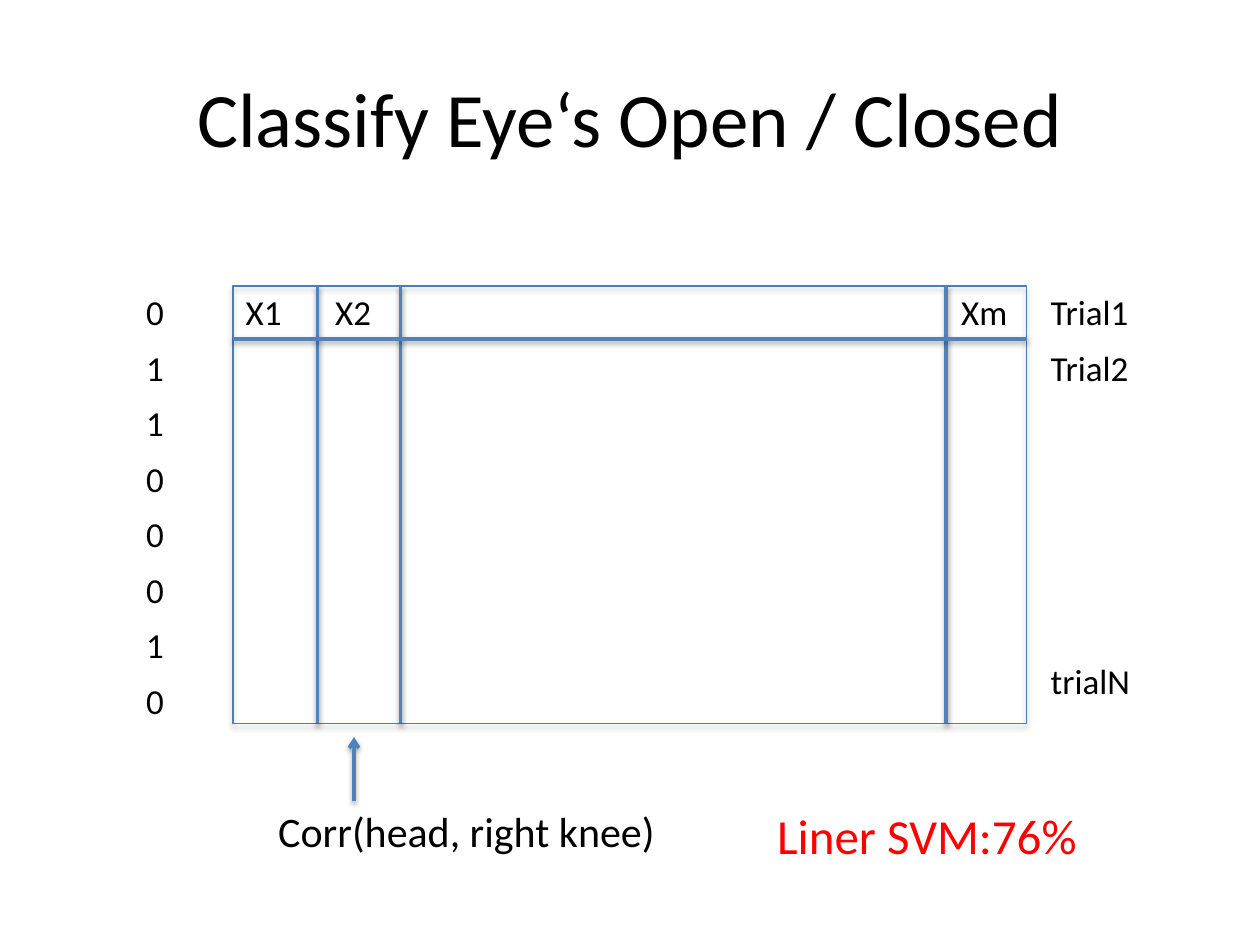
"""Build a slide showing the trial-by-feature matrix of an eye classifier."""
import pptx
import pptx.dml.color
import pptx.enum.shapes
import pptx.enum.text
import pptx.oxml
import pptx.oxml.ns
import pptx.util

Inches = pptx.util.Inches
Pt = pptx.util.Pt
RGBColor = pptx.dml.color.RGBColor

BLACK = RGBColor(0x00, 0x00, 0x00)
WHITE = RGBColor(0xFF, 0xFF, 0xFF)
RED = RGBColor(0xFF, 0x00, 0x00)
LINE_BLUE = RGBColor(0x4F, 0x81, 0xBD)
FRAME_BLUE = RGBColor(0x4B, 0x7E, 0xBC)
FONT = "Calibri"

LABELS = "01100010"
LEFT, TOP, WIDTH, HEIGHT = 1.85, 2.27, 6.3, 3.47
ROW_HEIGHT = 0.41
HEADER_BOTTOM = 2.69
COLUMN_LINES = (2.52, 3.18, 7.51)
FEATURE_WIDTHS = [0.71] * 9 + [1.06]
FEATURE_TEXTS = {(0, 0): "X1", (0, 1): "X2", (0, 8): "Xm",
                 (0, 9): "Trial1", (1, 9): "Trial2", (7, 9): "trialN"}


def add_run(p, text, size, color=BLACK):
    r = p.add_run()
    r.text = text
    r.font.name = FONT
    r.font.size = Pt(size)
    r.font.color.rgb = color


def add_shadow(shape, alpha, distance):
    shape._element.spPr.append(pptx.oxml.parse_xml(
        f'<a:effectLst {pptx.oxml.ns.nsdecls("a")}>'
        f'<a:outerShdw blurRad="{Pt(3.1)}" dist="{Pt(distance)}" dir="5400000" rotWithShape="0">'
        f'<a:srgbClr val="{BLACK}"><a:alpha val="{alpha * 1000}"/></a:srgbClr>'
        '</a:outerShdw></a:effectLst>'))


def set_borders(cell, bottom_width):
    tcPr = cell._tc.get_or_add_tcPr()
    for i, (side, width) in enumerate(zip("LRTB", (1, 1, 1, bottom_width))):
        tcPr.insert(i, pptx.oxml.parse_xml(
            f'<a:ln{side} {pptx.oxml.ns.nsdecls("a")} w="{Pt(width)}">'
            f'<a:solidFill><a:srgbClr val="{WHITE}"/></a:solidFill></a:ln{side}>'))


def add_grid(s, left, widths, texts, bordered=False):
    rows = len(LABELS)
    table = s.shapes.add_table(rows, len(widths), Inches(left), Inches(TOP),
                               Inches(sum(widths)), Inches(ROW_HEIGHT * rows)).table
    table.first_row = False
    table.horz_banding = False
    for column, width in zip(table.columns, widths):
        column.width = Inches(width)
    for i, row in enumerate(table.rows):
        row.height = Inches(ROW_HEIGHT)
        for j, cell in enumerate(row.cells):
            cell.fill.background()
            if bordered:
                set_borders(cell, 3 if i == 0 else 1)
            if (i, j) in texts:
                add_run(cell.text_frame.paragraphs[0], texts[i, j], 20)


def add_frame(s):
    sp = s.shapes.add_shape(pptx.enum.shapes.MSO_SHAPE.RECTANGLE, Inches(LEFT),
                            Inches(TOP), Inches(WIDTH), Inches(HEIGHT))
    sp.fill.background()
    sp.line.color.rgb = FRAME_BLUE
    sp.line.width = Pt(0.75)
    add_shadow(sp, 35, 1.8)


def add_line(s, x1, y1, x2, y2, arrow=False):
    line = s.shapes.add_connector(pptx.enum.shapes.MSO_CONNECTOR.STRAIGHT,
                                  Inches(x1), Inches(y1), Inches(x2), Inches(y2))
    line.line.color.rgb = LINE_BLUE
    line.line.width = Pt(2)
    if arrow:
        line.line._get_or_add_ln().append(pptx.oxml.parse_xml(
            f'<a:tailEnd {pptx.oxml.ns.nsdecls("a")} type="arrow"/>'))
    add_shadow(line, 38, 1.6)


def add_text(s, left, height, text, size, color=BLACK):
    sp = s.shapes.add_textbox(Inches(left), Inches(6.34), Inches(3.43), Inches(height))
    tf = sp.text_frame
    tf.word_wrap = True
    tf.auto_size = pptx.enum.text.MSO_AUTO_SIZE.SHAPE_TO_FIT_TEXT
    add_run(tf.paragraphs[0], text, size, color)


def add_title(s, text):
    sp = s.shapes.title
    sp.left, sp.top, sp.width, sp.height = map(Inches, (0.5, 0.3, 9, 1.25))
    tf = sp.text_frame
    tf.vertical_anchor = pptx.enum.text.MSO_ANCHOR.MIDDLE
    p = tf.paragraphs[0]
    p.alignment = pptx.enum.text.PP_ALIGN.CENTER
    add_run(p, text, 44)


def main():
    prs = pptx.Presentation()
    prs.slide_width, prs.slide_height = Inches(10), Inches(7.5)
    s = prs.slides.add_slide(prs.slide_layouts[5])
    add_title(s, "Classify Eye‘s Open / Closed")
    add_grid(s, 1.06, [0.58], {(i, 0): label for i, label in enumerate(LABELS)})
    add_grid(s, LEFT, FEATURE_WIDTHS, FEATURE_TEXTS, bordered=True)
    add_frame(s)
    for x in COLUMN_LINES:
        add_line(s, x, TOP, x, TOP + HEIGHT)
    add_line(s, LEFT, HEADER_BOTTOM, LEFT + WIDTH, HEADER_BOTTOM)
    add_text(s, 2.11, 0.5, "Corr(head, right knee)", 24)
    add_line(s, 2.81, 6.36, 2.81, 5.85, arrow=True)
    add_text(s, 6.07, 0.57, "Liner SVM:76%", 28, RED)
    prs.save("out.pptx")


if __name__ == "__main__":
    main()
